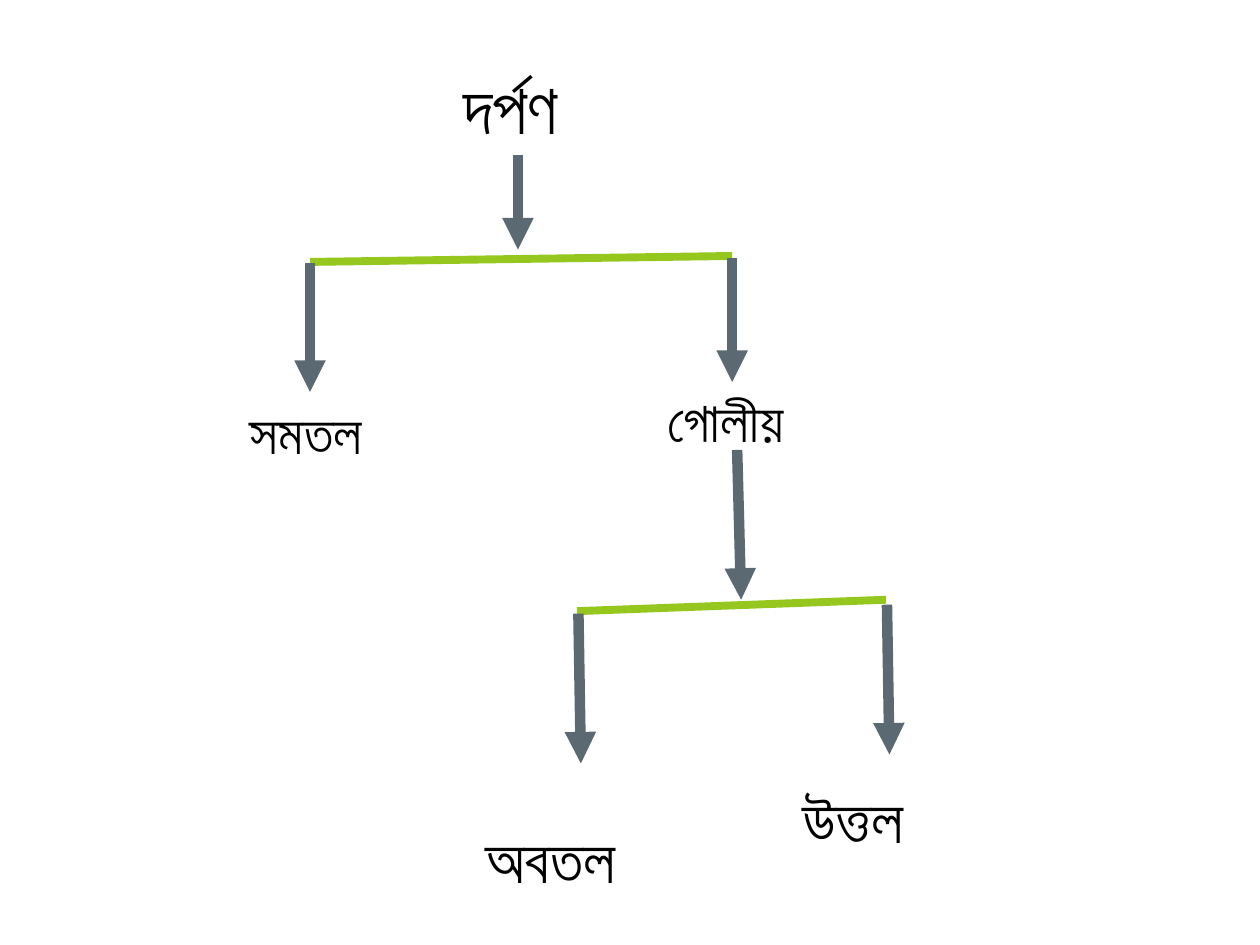
from lxml.etree import SubElement
from pptx import Presentation
from pptx.dml.color import RGBColor
from pptx.enum.shapes import MSO_CONNECTOR as CONN
from pptx.enum.text import MSO_ANCHOR, MSO_AUTO_SIZE, PP_ALIGN
from pptx.oxml.ns import qn
from pptx.util import Cm, Pt

COLORS = {"text": "000000", "arrow": "5B6973", "bar": "96C71E"}
FONT = "Roboto"

# Content: text, left, top, width, height (cm), size (pt)
ROOT = ("দর্পণ", 9.09, 1.17, 2.41, 1.96, 40)
LABELS = [
    ("সমতল", 4.78, 7.9, 4.32, 1.63, 32),
    ("গোলীয়", 13.21, 7.67, 4.32, 1.63, 32),
    ("অবতল", 9.53, 16.41, 5.84, 1.8, 36),
    ("উত্তল", 15.93, 15.6, 5.84, 1.8, 36),
]
# Start x, start y, end x, end y (cm)
BARS = [(6.25, 5.28, 14.76, 5.16), (11.63, 12.32, 17.86, 12.09)]
ARROWS = [
    (10.44, 3.12, 10.44, 5.03),
    (6.25, 5.31, 6.25, 7.9),
    (14.76, 5.21, 14.76, 7.7),
    (14.86, 9.07, 14.94, 12.09),
    (11.66, 12.37, 11.71, 15.39),
    (17.88, 12.19, 17.93, 15.21),
]


def rgb(name):
    return RGBColor.from_string(COLORS[name])


def set_attrs(obj, **values):
    for name, value in values.items():
        setattr(obj, name, value)


def fill_label(sp, label, wrap=True):
    text, left, top, width, height, size = label
    set_attrs(sp, left=Cm(left), top=Cm(top), width=Cm(width), height=Cm(height))
    tf = sp.text_frame
    set_attrs(tf, word_wrap=wrap, auto_size=MSO_AUTO_SIZE.SHAPE_TO_FIT_TEXT,
              vertical_anchor=MSO_ANCHOR.TOP)
    p = tf.paragraphs[0]
    p.alignment = PP_ALIGN.LEFT
    r = p.add_run()
    r.text = text
    set_attrs(r.font, name=FONT, size=Pt(size))
    r.font.color.rgb = rgb("text")


def add_line(ends, color, width, arrow=False):
    sp = s.shapes.add_connector(CONN.STRAIGHT, *map(Cm, ends))
    sp.line.color.rgb = rgb(color)
    sp.line.width = Pt(width)
    if arrow:
        SubElement(sp.line._get_or_add_ln(), qn("a:tailEnd"), type="triangle")
    SubElement(sp._element.spPr, qn("a:effectLst"))


prs = Presentation()
set_attrs(prs, slide_width=Cm(25.4), slide_height=Cm(19.05))
s = prs.slides.add_slide(prs.slide_layouts[5])

# Root of the tree
fill_label(s.shapes.title, ROOT, wrap=False)

# Branches
for ends in BARS:
    add_line(ends, "bar", 4.5)
for ends in ARROWS:
    add_line(ends, "arrow", 6, arrow=True)

# Kinds of mirror
for label in LABELS:
    fill_label(s.shapes.add_textbox(0, 0, 0, 0), label)

prs.save("out.pptx")
